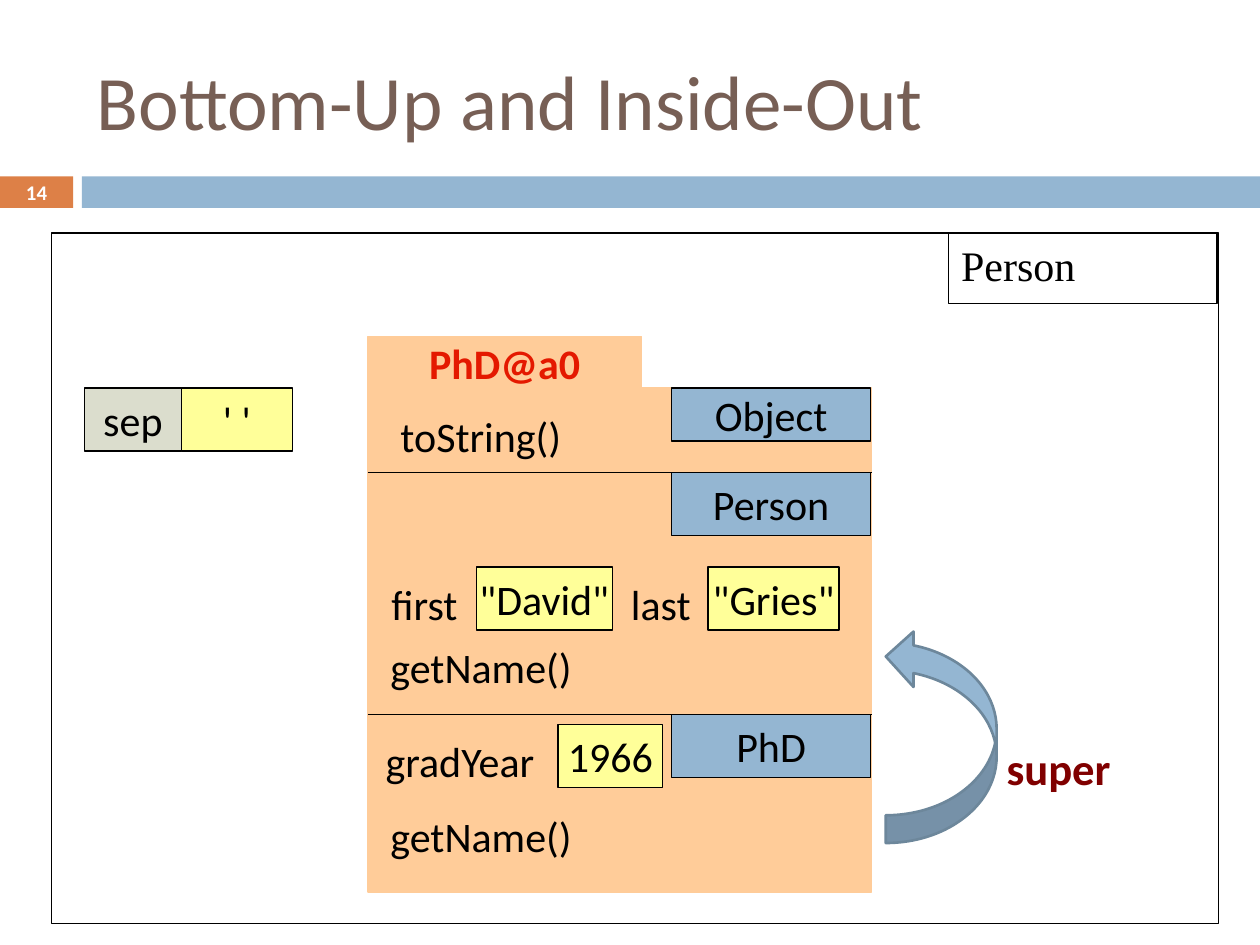
from lxml import etree
from pptx import Presentation
from pptx.dml.color import RGBColor
from pptx.enum.shapes import MSO_CONNECTOR, MSO_SHAPE
from pptx.enum.text import MSO_ANCHOR, PP_ALIGN
from pptx.oxml.ns import qn
from pptx.util import Inches, Pt

RECTANGLE = MSO_SHAPE.RECTANGLE
CURVED_ARROW = MSO_SHAPE.CURVED_RIGHT_ARROW
STRAIGHT = MSO_CONNECTOR.STRAIGHT
LEFT, CENTER, RIGHT = PP_ALIGN.LEFT, PP_ALIGN.CENTER, PP_ALIGN.RIGHT
TOP, MIDDLE = MSO_ANCHOR.TOP, MSO_ANCHOR.MIDDLE

BLACK, WHITE = "000000", "FFFFFF"
BLUE, ORANGE = "94B6D2", "DD8047"
PEACH, YELLOW, GRAY = "FFCC99", "FFFF99", "DBDDCD"
OBJECT_LEFT, OBJECT_RIGHT = 2.92, 6.92
TAB_LEFT, TAB_WIDTH = 5.33, 1.58


def color(hex_value):
    """Turn a hex string into a colour."""
    return RGBColor.from_string(hex_value)


def write(shape, text, size=24, font="Calibri", ink=BLACK, bold=False,
          align=CENTER, anchor=MIDDLE, wrap=False, baseline=None):
    """Put one formatted line of text into a shape."""
    frame = shape.text_frame
    frame.word_wrap = wrap
    frame.vertical_anchor = anchor
    paragraph = frame.paragraphs[0]
    paragraph.alignment = align
    run = paragraph.add_run()
    run.text = text
    run.font.size = Pt(size)
    run.font.name = font
    run.font.bold = bold
    run.font.color.rgb = color(ink)
    if baseline is not None:
        run.font._element.set("baseline", str(baseline))


def add_box(slide, left, top, width, height, text=None, fill=None, line=None,
            weight=0.75, kind=RECTANGLE, **text_format):
    """Add a preset shape with optional fill, outline and text."""
    box = slide.shapes.add_shape(
        kind, Inches(left), Inches(top), Inches(width), Inches(height))
    box.shadow.inherit = False
    if fill:
        box.fill.solid()
        box.fill.fore_color.rgb = color(fill)
    else:
        box.fill.background()
    if line:
        box.line.color.rgb = color(line)
        box.line.width = Pt(weight)
    else:
        box.line.fill.background()
    if text:
        write(box, text, **text_format)
    return box


def add_label(slide, left, top, width, height, text, **text_format):
    """Add a text box."""
    label = slide.shapes.add_textbox(
        Inches(left), Inches(top), Inches(width), Inches(height))
    write(label, text, **text_format)


def add_divider(slide, top):
    """Add a line across the object between two class partitions."""
    divider = slide.shapes.add_connector(
        STRAIGHT, Inches(OBJECT_LEFT), Inches(top), Inches(OBJECT_RIGHT), Inches(top))
    divider.line.color.rgb = color(BLACK)
    divider.line.width = Pt(0.75)
    etree.SubElement(divider._element.spPr, qn("a:effectLst"))


def add_header(slide):
    """Add the title, the band and the slide number."""
    add_box(slide, 0, 1.4, 0.58, 0.25, fill=ORANGE)
    add_box(slide, 0.65, 1.4, 9.35, 0.25, fill=BLUE)
    add_label(slide, 0.67, 0.25, 8.92, 1.08, "Bottom-Up and Inside-Out",
              size=44, ink="775F55", align=LEFT, wrap=True)
    add_label(slide, 0, 1.39, 0.58, 0.27, "14", size=11.9, ink=WHITE,
              bold=True, wrap=True)


def add_phd_object(slide):
    """Add the PhD object with its partitions, fields and methods."""
    add_box(slide, OBJECT_LEFT, 3.08, OBJECT_RIGHT - OBJECT_LEFT, 4,
            fill=PEACH, line=PEACH)
    add_box(slide, OBJECT_LEFT, 2.67, 2.17, 0.42, "PhD@a0", fill=PEACH,
            line=PEACH, ink="E41900", bold=True)

    for class_name, top, height in (
            ("Object", 3.08, 0.42), ("Person", 3.75, 0.5), ("PhD", 5.67, 0.5)):
        add_box(slide, TAB_LEFT, top, TAB_WIDTH, height, class_name,
                fill=BLUE, line=BLACK)
    for top in (3.75, 5.67):
        add_divider(slide, top)

    for method, left, top, width in (
            ("toString()", 3.08, 3.25, 1.42),
            ("getName()", 3, 5.08, 1.56),
            ("getName()", 3, 6.42, 1.56)):
        add_box(slide, left, top, width, 0.42, method, fill=PEACH, align=LEFT)

    for field, left, top, width in (
            ("first", 2.92, 4.58, 0.81),
            ("last", 4.86, 4.58, 0.72),
            ("gradYear", 3.25, 5.83, 1.09)):
        add_box(slide, left, top, width, 0.42, field, align=RIGHT)

    for value, left, top, width in (
            ('"David"', 3.78, 4.5, 1.08),
            ('"Gries"', 5.62, 4.5, 1.04),
            ("1966", 4.43, 5.75, 0.83)):
        add_box(slide, left, top, width, 0.5, value, fill=YELLOW, line=BLACK)


def add_super_call(slide):
    """Add the curved arrow from PhD up to Person and its label."""
    super_arrow = add_box(slide, 7.03, 4.99, 0.88, 1.7, fill=BLUE,
                          line="6D879B", weight=1.5, kind=CURVED_ARROW)
    super_arrow.rotation = 180
    add_label(slide, 7.89, 5.42, 1.14, 0.59, "super", size=44, ink="800000",
              bold=True, align=LEFT, anchor=TOP, baseline=-25000)


def add_person_class(slide):
    """Add the Person file drawer and its static variable."""
    add_box(slide, 0.41, 1.85, 9.26, 5.48, line=BLACK)
    add_box(slide, 7.53, 1.85, 2.13, 0.56, "Person", line=BLACK,
            font="Times New Roman", align=LEFT, anchor=TOP, wrap=True)
    add_box(slide, 0.67, 3.08, 0.77, 0.5, "sep", fill=GRAY, line=BLACK, weight=0)
    add_box(slide, 1.44, 3.08, 0.88, 0.5, "' '", fill=YELLOW, line=BLACK)


def main():
    """Build and save the slide."""
    presentation = Presentation()
    presentation.slide_width = Inches(10)
    presentation.slide_height = Inches(7.5)
    slide = presentation.slides.add_slide(presentation.slide_layouts[6])
    add_header(slide)
    add_phd_object(slide)
    add_super_call(slide)
    add_person_class(slide)
    presentation.save("out.pptx")


if __name__ == "__main__":
    main()
